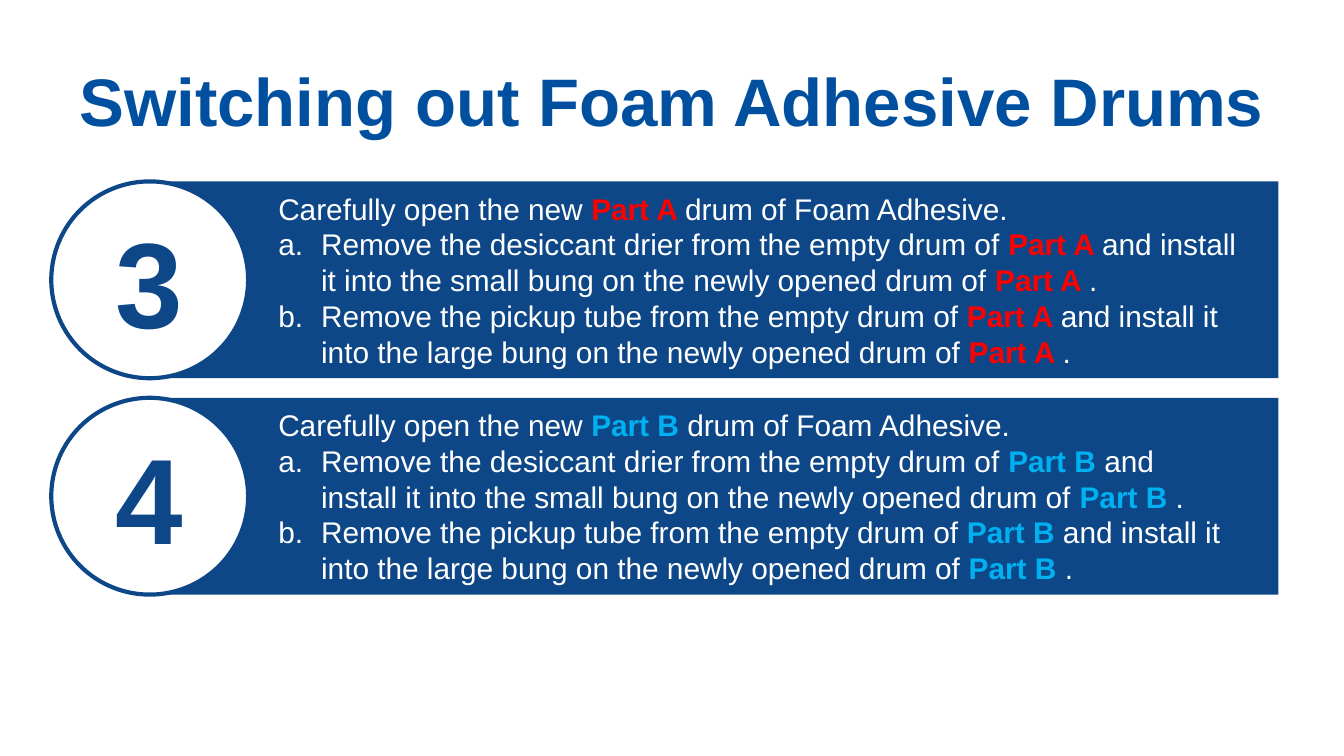
from lxml import etree
from pptx import Presentation
from pptx import util as u
from pptx.dml.color import RGBColor
from pptx.enum import shapes, text
from pptx.oxml.ns import qn

BLUE = RGBColor(0x0D, 0x47, 0x87)
TITLE_BLUE = RGBColor(0x00, 0x50, 0x9F)
WHITE = RGBColor(0xFF, 0xFF, 0xFF)
RED = RGBColor(0xFF, 0x00, 0x00)
SKY = RGBColor(0x00, 0xB0, 0xF0)

INTRO = "Carefully open the new {part}drum of Foam Adhesive."
ACTIONS = [
    "Remove the desiccant drier from the empty drum of {part}"
    "and install it into the small bung on the newly opened drum of {part}.",
    "Remove the pickup tube from the empty drum of {part}"
    "and install it into the large bung on the newly opened drum of {part}.",
]
STEPS = [("3", "Part A ", RED), ("4", "Part B ", SKY)]


def add_span(para, words, size=16, color=WHITE, bold=False):
    span = para.add_run()
    span.text = words
    span.font.name = "Arial"
    span.font.size = u.Pt(size)
    span.font.color.rgb = color
    span.font.bold = bold


def add_block(group, kind, left, top, width, height, fill, line=None):
    block = group.shapes.add_shape(kind, u.Cm(left), u.Cm(top), u.Cm(width), u.Cm(height))
    block.shadow.inherit = False
    block.fill.solid()
    block.fill.fore_color.rgb = fill
    if line is None:
        block.line.fill.background()
    else:
        block.line.color.rgb = line
        block.line.width = u.Pt(2.25)
    return block


def set_indent(para, left, hanging=0, lettered=False):
    para.level = 1
    para.alignment = text.PP_ALIGN.LEFT
    properties = para._p.get_or_add_pPr()
    properties.set("marL", str(u.Cm(left)))
    properties.set("indent", str(-u.Cm(hanging)))
    if lettered:
        etree.SubElement(properties, qn("a:buFont"), typeface="+mj-lt")
        etree.SubElement(properties, qn("a:buAutoNum"), type="alphaLcPeriod")


def add_instructions(frame, part, color):
    frame.word_wrap = True
    frame.vertical_anchor = text.MSO_ANCHOR.MIDDLE
    frame.margin_left, frame.margin_right = u.Cm(1.27), u.Cm(0.76)
    for index, sentence in enumerate([INTRO, *ACTIONS]):
        para = frame.add_paragraph() if index else frame.paragraphs[0]
        if index:
            set_indent(para, 1.93, hanging=0.81, lettered=True)
        else:
            set_indent(para, 1.12)
        for position, words in enumerate(sentence.split("{part}")):
            if position:
                add_span(para, part, color=color, bold=True)
            add_span(para, words)


def add_step(page, left, top, width, height, number, part, color):
    group = page.shapes.add_group_shape()
    overlap = 1.9
    panel = add_block(group, shapes.MSO_SHAPE.RECTANGLE,
                      left + overlap, top, width - overlap, height, BLUE)
    add_instructions(panel.text_frame, part, color)
    add_block(group, shapes.MSO_SHAPE.OVAL, left, top, height, height, WHITE, line=BLUE)
    box = group.shapes.add_textbox(u.Cm(left), u.Cm(top + 0.36), u.Cm(height), u.Cm(3.02))
    box.text_frame.word_wrap = True
    para = box.text_frame.paragraphs[0]
    para.alignment = text.PP_ALIGN.CENTER
    add_span(para, number, size=65, color=BLUE, bold=True)


def add_title(page, left, top, width, height, words):
    title = page.shapes.title
    title.left, title.top = u.Cm(left), u.Cm(top)
    title.width, title.height = u.Cm(width), u.Cm(height)
    title.text_frame.vertical_anchor = text.MSO_ANCHOR.MIDDLE
    para = title.text_frame.paragraphs[0]
    para.alignment = text.PP_ALIGN.CENTER
    add_span(para, words, size=36, color=TITLE_BLUE, bold=True)


def main():
    deck = Presentation()
    deck.slide_width, deck.slide_height = u.Cm(25.4), u.Cm(14.29)
    page = deck.slides.add_slide(deck.slide_layouts[5])
    add_title(page, 0, 0.69, 25.4, 2.39, "Switching out Foam Adhesive Drums")
    for index, step in enumerate(STEPS):
        add_step(page, 0.97, 3.43 + index * 4.09, 23.19, 3.72, *step)
    deck.save("out.pptx")


if __name__ == "__main__":
    main()
